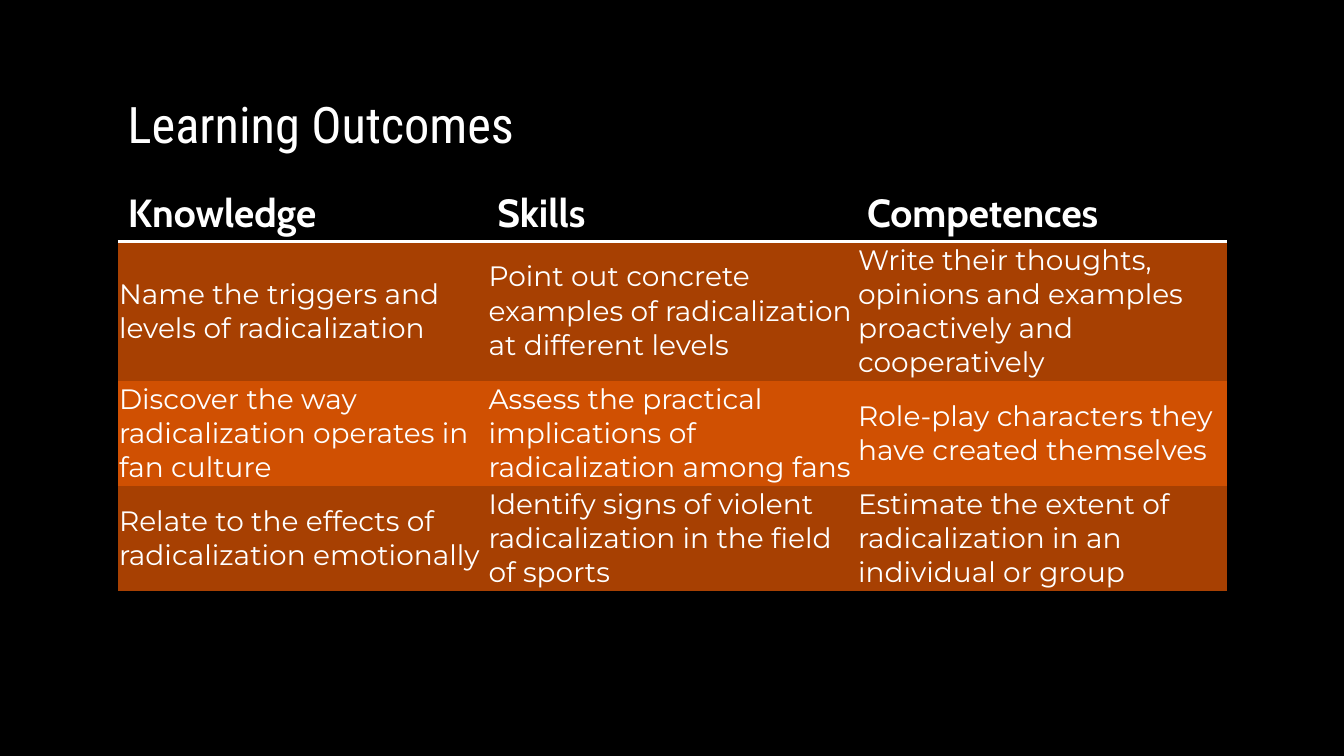
import pptx
import pptx.dml.color
import pptx.enum.text
import pptx.oxml
import pptx.oxml.ns
import pptx.util
from pptx.util import Cm

ANCHOR = pptx.enum.text.MSO_ANCHOR
PLAIN_TABLE_STYLE = "{2D5ABB26-0587-4C30-8999-92F81FD0307C}"

HEADINGS = ["Knowledge", "Skills", "Competences"]
OUTCOMES = [
    ["Name the triggers and levels of radicalization",
     "Point out concrete examples of radicalization at different levels",
     "Write their thoughts, opinions and examples proactively and cooperatively"],
    ["Discover the way radicalization operates in fan culture",
     "Assess the practical implications of radicalization among fans",
     "Role-play characters they have created themselves"],
    ["Relate to the effects of radicalization emotionally",
     "Identify signs of violent radicalization in the field of sports",
     "Estimate the extent of radicalization in an individual or group"],
]
ROW_HEIGHTS = [1.44, 3.5, 2.65, 2.65]


def color(value):
    return pptx.dml.color.RGBColor.from_string(value)


class OutcomesPage:
    title_font, heading_font, body_font = "Roboto Condensed", "Cabin", "Montserrat"
    black, white = "000000", "FFFFFF"
    bands = ["A74002", "D05002"]

    def __init__(self, deck):
        self.page = deck.slides.add_slide(deck.slide_layouts[6])
        self.page.background.fill.solid()
        self.page.background.fill.fore_color.rgb = color(self.black)

    def set_text(self, frame, text, font, size, bold=False):
        frame.text = text
        para = frame.paragraphs[0]
        for span in para.runs:
            span.font.name = font
            span.font.size = pptx.util.Pt(size)
            span.font.bold = bold
            span.font.color.rgb = color(self.white)
        return para

    def title(self, text, left, top, width, height):
        box = self.page.shapes.add_textbox(Cm(left), Cm(top), Cm(width), Cm(height))
        box.text_frame.word_wrap = True
        box.text_frame.vertical_anchor = ANCHOR.BOTTOM
        para = self.set_text(box.text_frame, text, self.title_font, 36)
        para.line_spacing = 0.9

    def table(self, headings, rows, left, top, width, heights):
        frame = self.page.shapes.add_table(
            len(rows) + 1, len(headings), Cm(left), Cm(top), Cm(width), Cm(sum(heights)))
        table = frame.table
        table.first_row = table.horz_banding = False
        table._tbl.tblPr.find(pptx.oxml.ns.qn("a:tableStyleId")).text = PLAIN_TABLE_STYLE
        for row, height in zip(table.rows, heights):
            row.height = Cm(height)
        for column, text in enumerate(headings):
            self.heading_cell(table.cell(0, column), text)
        for number, texts in enumerate(rows):
            for column, text in enumerate(texts):
                self.body_cell(table.cell(number + 1, column), text, self.bands[number % 2])

    def fill(self, cell, value):
        cell.fill.solid()
        cell.fill.fore_color.rgb = color(value)

    def heading_cell(self, cell, text):
        self.set_text(cell.text_frame, text, self.heading_font, 28, bold=True)
        self.fill(cell, self.black)
        # Rule under the heading
        rule = pptx.oxml.parse_xml(
            f'<a:lnB {pptx.oxml.ns.nsdecls("a")} w="{pptx.util.Pt(2)}"><a:solidFill>'
            f'<a:srgbClr val="{self.white}"/></a:solidFill></a:lnB>')
        cell._tc.get_or_add_tcPr().insert(0, rule)

    def body_cell(self, cell, text, band):
        para = self.set_text(cell.text_frame, text, self.body_font, 20)
        para.space_after = pptx.util.Pt(8)
        cell.vertical_anchor = ANCHOR.MIDDLE
        cell.margin_left = cell.margin_right = Cm(0.03)
        cell.margin_top = cell.margin_bottom = Cm(0.03)
        self.fill(cell, band)


def main():
    deck = pptx.Presentation()
    deck.slide_width, deck.slide_height = Cm(33.87), Cm(19.05)
    outcomes = OutcomesPage(deck)

    # Title
    outcomes.title("Learning Outcomes", 2.97, 0.84, 27.94, 3.18)

    # Table of outcomes
    outcomes.table(HEADINGS, OUTCOMES, 2.97, 4.65, 27.94, ROW_HEIGHTS)

    deck.save("out.pptx")


if __name__ == "__main__":
    main()
